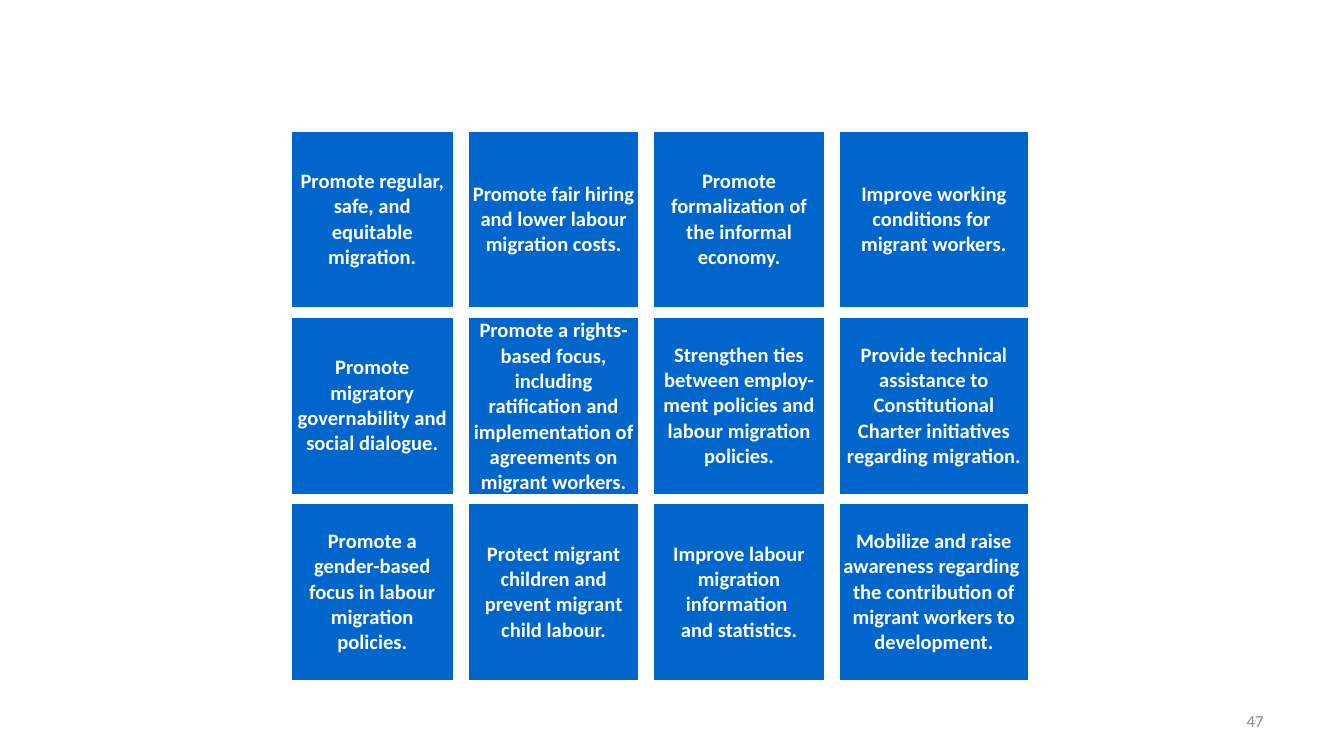
from dataclasses import dataclass

from lxml import etree
from pptx import Presentation
from pptx.dml.color import RGBColor
from pptx.enum.text import MSO_ANCHOR, PP_ALIGN
from pptx.oxml.ns import qn
from pptx.util import Inches, Pt

MIDDLE = MSO_ANCHOR.MIDDLE
CENTER, RIGHT = PP_ALIGN.CENTER, PP_ALIGN.RIGHT
COLORS = {"blue": "0066CC", "white": "FFFFFF", "gray": "8C8C8C"}
FONT = "Calibri"
NO_STYLE = "{2D5ABB26-0587-4C30-8999-92F81FD0307C}"

SLIDE_W = 10
SLIDE_H = SLIDE_W * 9 / 16
GRID_LEFT, GRID_TOP, GRID_HEIGHT = 2.17, 0.98, 4.08
COL_WIDTHS = (1.2, 1.26, 1.26, 1.4)
COL_GAP, ROW_GAP = 0.12, 0.08


@dataclass(frozen=True)
class Goal:
    row: int
    col: int
    text: str


# A vertical tab marks a line break within a paragraph
GOAL_ROWS = (
    ("Promote regular, safe, and equitable migration.",
     "Promote fair hiring and lower labour migration costs.",
     "Promote formalization of the informal economy.",
     "Improve working conditions for \vmigrant workers."),
    ("Promote migratory governability and social dialogue.",
     "Promote a rights-based focus, including ratification and "
     "implementation of agreements on migrant workers.",
     "Strengthen ties between employ-ment policies and labour migration policies.",
     "Provide technical assistance to Constitutional Charter initiatives "
     "regarding migration."),
    ("Promote a gender-based focus in labour migration policies.",
     "Protect migrant children and prevent migrant child labour.",
     "Improve labour migration information \vand statistics.",
     "Mobilize and raise awareness regarding \vthe contribution of migrant "
     "workers to development."),
)
GOALS = [Goal(i, j, text) for i, row in enumerate(GOAL_ROWS)
         for j, text in enumerate(row)]


def write(p, text: str, size: float, color: str, align, bold: bool = False) -> None:
    """Fill a paragraph and format it together with its runs."""
    p.text = text
    p.alignment = align
    for font in (p.font, *(r.font for r in p.runs)):
        font.name, font.size, font.bold = FONT, Pt(size), bold
        font.color.rgb = RGBColor.from_string(COLORS[color])


def with_gaps(sizes, gap: float) -> list[float]:
    """Put a gap between each pair of neighbouring sizes."""
    return [x for size in sizes for x in (size, gap)][:-1]


def add_grid(slide, widths: list[float], heights: list[float]):
    table = slide.shapes.add_table(
        len(heights), len(widths), Inches(GRID_LEFT), Inches(GRID_TOP),
        Inches(sum(widths)), Inches(sum(heights))).table
    table.first_row = table.horz_banding = False
    table._tbl.tblPr.find(qn("a:tableStyleId")).text = NO_STYLE
    for column, width in zip(table.columns, widths):
        column.width = Inches(width)
    for row, height in zip(table.rows, heights):
        row.height = Inches(height)
    # Tiny empty text lets the gap rows stay thin
    for cell in table.iter_cells():
        cell.margin_left = cell.margin_right = Inches(0.02)
        cell.margin_top = cell.margin_bottom = 0
        p = cell.text_frame.paragraphs[0]
        etree.SubElement(p._p, qn("a:endParaRPr"), sz="100")
    return table


def fill_goal(table, goal: Goal) -> None:
    cell = table.cell(2 * goal.row, 2 * goal.col)
    cell.fill.solid()
    cell.fill.fore_color.rgb = RGBColor.from_string(COLORS["blue"])
    cell.vertical_anchor = MIDDLE
    write(cell.text_frame.paragraphs[0], goal.text, 11, "white", CENTER, bold=True)


def add_page_number(slide, number: str) -> None:
    sp = slide.shapes.add_textbox(Inches(7.17), Inches(5.21), Inches(2.33), Inches(0.3))
    tf = sp.text_frame
    tf.word_wrap = True
    tf.vertical_anchor = MIDDLE
    write(tf.paragraphs[0], number, 9, "gray", RIGHT)


def main() -> None:
    prs = Presentation()
    prs.slide_width, prs.slide_height = Inches(SLIDE_W), Inches(SLIDE_H)
    slide = prs.slides.add_slide(prs.slide_layouts[6])

    # Page number
    add_page_number(slide, "47")

    # Grid of goals
    count = len(GOAL_ROWS)
    row_height = (GRID_HEIGHT - (count - 1) * ROW_GAP) / count
    heights = with_gaps([row_height] * count, ROW_GAP)
    table = add_grid(slide, with_gaps(COL_WIDTHS, COL_GAP), heights)
    for goal in GOALS:
        fill_goal(table, goal)

    prs.save("out.pptx")


if __name__ == "__main__":
    main()
